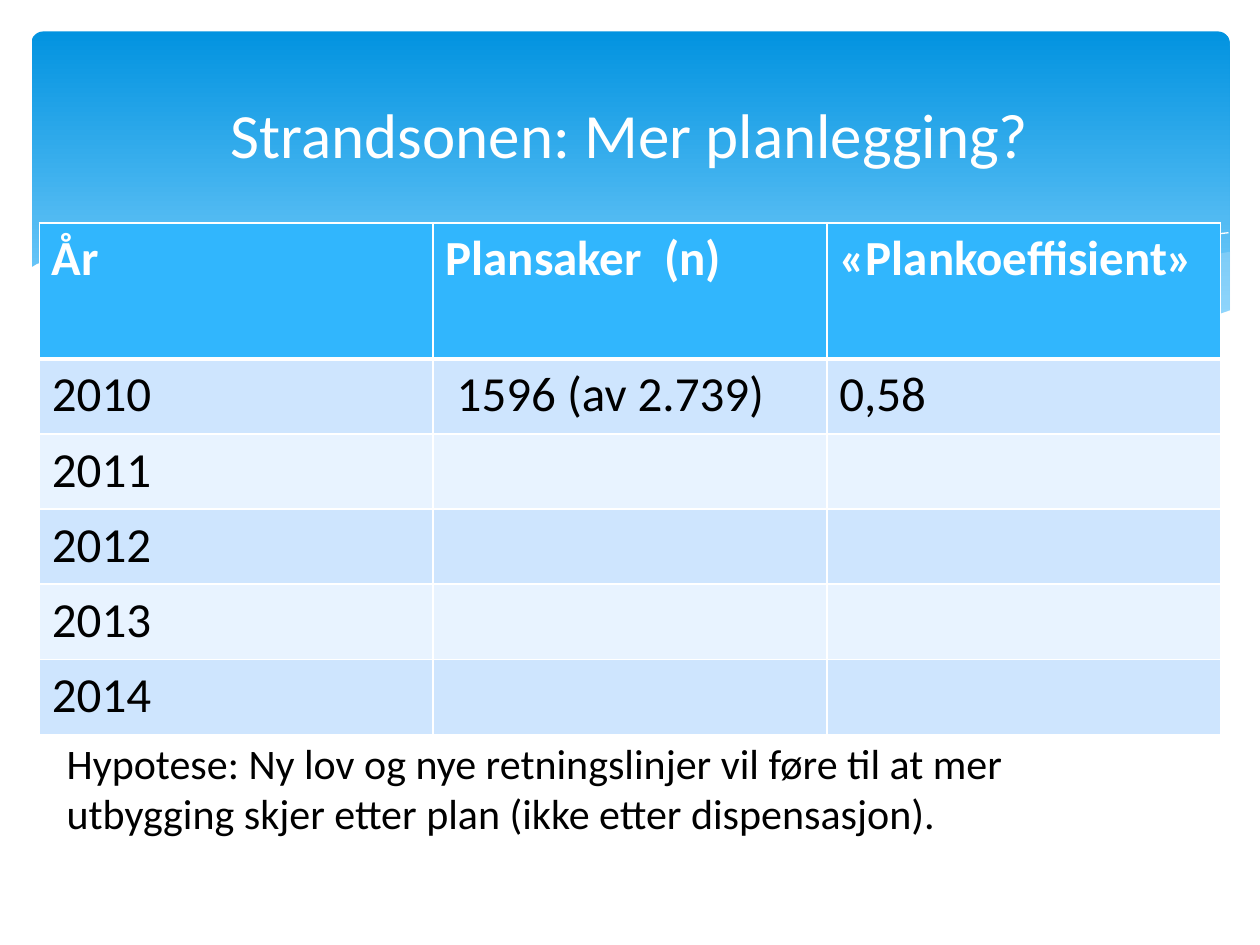
from lxml import etree
from pptx import Presentation
from pptx.dml.color import RGBColor
from pptx.enum import shapes, text
from pptx.oxml import ns
from pptx.util import Pt

FONT = "Calibri"
COLORS = {
    "white": "FFFFFF", "black": "000000", "wave": "C6E7FC",
    "top": "0293E0", "bottom": "83D3FE",
    "header": "31B6FD", "odd": "CEE5FE", "even": "E8F3FF",
}

# Wave outlines, in points
RIGHT_WAVE = [
    (702, 144), (676, 149), (641, 156), (620, 161), (580, 171), (542, 179),
    (508, 185), (476, 191), (508, 195), (536, 198), (562, 199.5), (586, 200),
    (608, 199), (628, 197), (646, 194), (663, 190), (678, 186.5),
    (693, 181.5), (703, 178), (703, 144)]
LONG_WAVE = [
    (643, 196.5), (624, 194), (581, 187), (534, 178), (481, 166), (453, 160),
    (420, 152), (390, 146), (361, 141), (335, 137.5), (302, 134.5),
    (274, 133), (248, 134), (225, 135.5), (206, 137.5), (233, 141),
    (261, 146), (291, 152), (323, 160), (382, 173), (433, 184), (468, 190),
    (500, 195), (528, 198), (557, 200), (581, 200), (610, 199.5), (631, 198)]
LONG_LINE = [
    (222.5, 140.5), (236, 138), (254, 136), (279, 134.5), (312, 135),
    (352, 137), (400, 142), (458, 150), (500, 157.5), (547, 168),
    (598, 181), (653, 196)]
RIGHT_LINE = [
    (441, 185), (484, 173.5), (518, 165), (559, 155.5), (602, 147),
    (645, 139.5), (675, 135.5), (702, 133)]
WHITE_EDGE = [
    (703.5, 177), (684, 184), (662, 191), (639, 195), (612, 198),
    (583, 199.5), (548, 198), (510, 194.5), (467, 188.5), (417, 180),
    (362, 168), (322, 158.5), (281, 149), (245, 142), (210, 137), (180, 134),
    (152, 132.5), (127, 132.5), (105, 133), (86, 135), (68, 137.5),
    (55, 140.5), (42.5, 143.5), (33, 146), (26, 149), (21, 151),
    (16.5, 153.5), (16.5, 237), (703.5, 237)]

ROWS = [
    ("År", "Plansaker  (n)", "«Plankoeffisient»"),
    ("2010", " 1596 (av 2.739)", "0,58"),
    ("2011", "", ""),
    ("2012", "", ""),
    ("2013", "", ""),
    ("2014", "", ""),
]


def rgb(name):
    return RGBColor.from_string(COLORS[name])


def add_run(p, content, size, color, bold=False):
    r = p.add_run()
    r.text = content
    r.font.name = FONT
    r.font.size = Pt(size)
    r.font.bold = bold
    r.font.color.rgb = rgb(color)


def add_text(s, box, content, size, color, align, anchor):
    tf = s.shapes.add_textbox(*map(Pt, box)).text_frame
    tf.word_wrap = True
    tf.vertical_anchor = anchor
    p = tf.paragraphs[0]
    p.alignment = align
    add_run(p, content, size, color)


def add_banner(s):
    sp = s.shapes.add_shape(shapes.MSO_SHAPE.ROUNDED_RECTANGLE,
                            Pt(18), Pt(18), Pt(684.7), Pt(194.4))
    sp.adjustments[0] = 0.034
    sp.shadow.inherit = False
    sp.line.fill.background()
    sp.fill.gradient()
    sp.fill.gradient_angle = 270
    for stop, name, position in zip(sp.fill.gradient_stops,
                                    ("top", "bottom"), (0, 0.9)):
        stop.color.rgb = rgb(name)
        stop.position = position


def add_outline(s, points, closed):
    builder = s.shapes.build_freeform(*points[0], scale=Pt(1))
    builder.add_line_segments(points[1:], close=closed)
    sp = builder.convert_to_shape()
    sp.shadow.inherit = False
    return sp


def add_wave(s, points, color, opacity=100):
    sp = add_outline(s, points, True)
    sp.line.fill.background()
    sp.fill.solid()
    sp.fill.fore_color.rgb = rgb(color)
    if opacity < 100:
        clr = sp._element.spPr.find(".//" + ns.qn("a:srgbClr"))
        etree.SubElement(clr, ns.qn("a:alpha"), val=str(opacity * 1000))


def add_curve(s, points):
    sp = add_outline(s, points, False)
    sp.fill.background()
    sp.line.color.rgb = rgb("white")
    sp.line.width = Pt(0)


def set_borders(cell, top, bottom):
    tc_pr = cell._tc.get_or_add_tcPr()
    for side, width in (("L", 1), ("R", 1), ("T", top), ("B", bottom)):
        ln = etree.SubElement(tc_pr, ns.qn("a:ln" + side), w=str(Pt(width)))
        fill = etree.SubElement(ln, ns.qn("a:solidFill"))
        etree.SubElement(fill, ns.qn("a:srgbClr"), val=COLORS["white"])


def add_plan_table(s):
    heights = [77.8] + [42.9] * (len(ROWS) - 1)
    table = s.shapes.add_table(len(ROWS), 3, Pt(22.5), Pt(127.4),
                               Pt(675), Pt(sum(heights))).table
    for col in table.columns:
        col.width = Pt(225)
    for i, (row, height) in enumerate(zip(ROWS, heights)):
        table.rows[i].height = Pt(height)
        header = i == 0
        fill = "header" if header else ("odd" if i % 2 else "even")
        for j, content in enumerate(row):
            cell = table.cell(i, j)
            set_borders(cell, 3 if i == 1 else 1, 3 if header else 1)
            cell.fill.solid()
            cell.fill.fore_color.rgb = rgb(fill)
            if content:
                add_run(cell.text_frame.paragraphs[0], content, 28,
                        "white" if header else "black", header)


def main():
    prs = Presentation()
    prs.slide_width, prs.slide_height = Pt(720), Pt(540)
    s = prs.slides.add_slide(prs.slide_layouts[6])

    # Banner with waves
    add_banner(s)
    add_wave(s, RIGHT_WAVE, "wave", 29)
    add_wave(s, LONG_WAVE, "wave", 40)
    add_curve(s, LONG_LINE)
    add_curve(s, RIGHT_LINE)
    add_wave(s, WHITE_EDGE, "white")

    # Table, title and hypothesis
    add_plan_table(s)
    add_text(s, (36, 27, 648, 98.6), "Strandsonen: Mer planlegging?", 36,
             "white", text.PP_ALIGN.CENTER, text.MSO_ANCHOR.MIDDLE)
    add_text(s, (31, 417.6, 641, 65.5),
             "Hypotese: Ny lov og nye retningslinjer vil føre til at mer "
             "utbygging skjer etter plan (ikke etter dispensasjon).", 24,
             "black", text.PP_ALIGN.LEFT, text.MSO_ANCHOR.TOP)

    prs.save("out.pptx")


if __name__ == "__main__":
    main()
